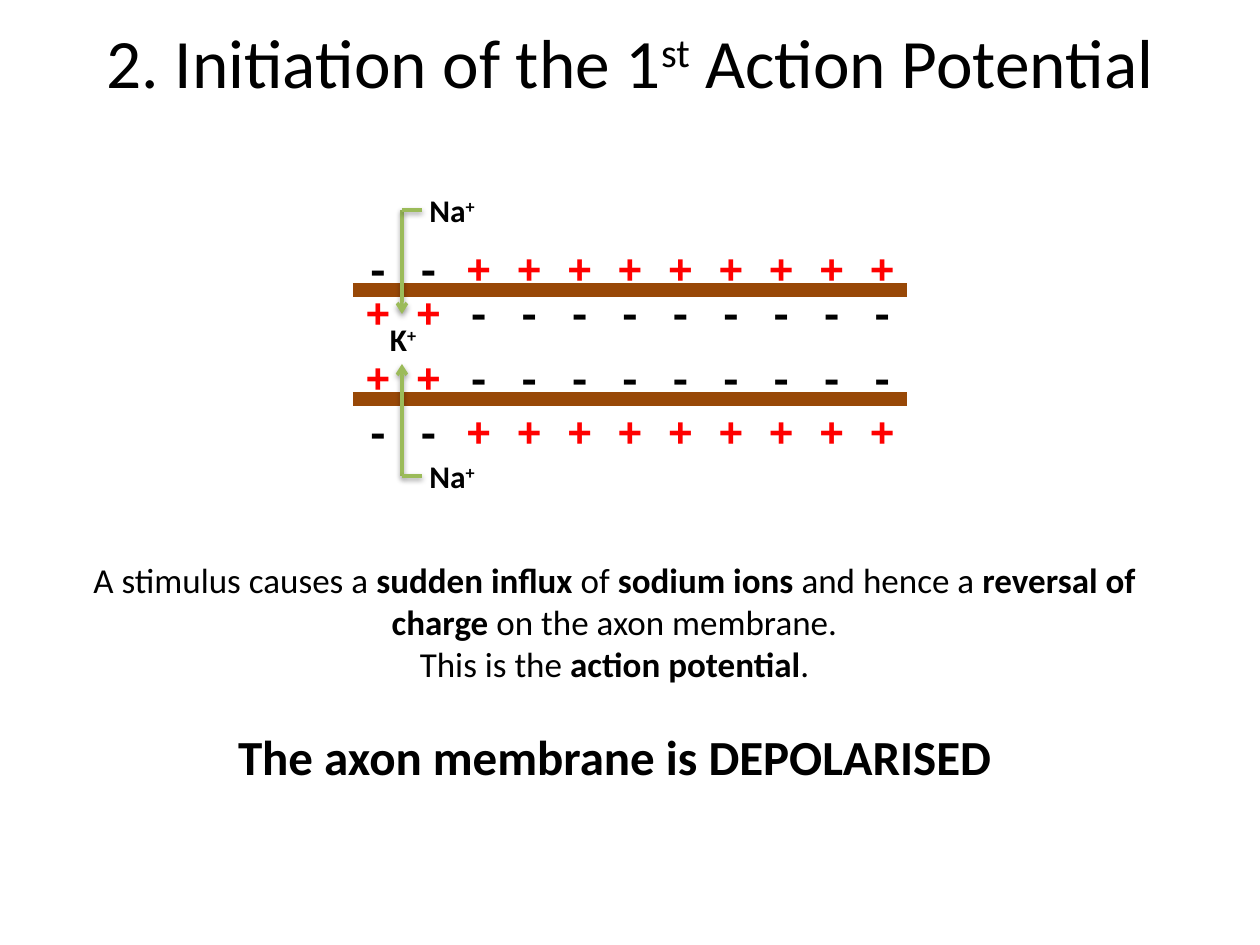
from typing import NamedTuple

from lxml.etree import SubElement
from pptx import Presentation
from pptx.dml.color import RGBColor
from pptx.enum.shapes import MSO_CONNECTOR as Connector
from pptx.enum.text import MSO_ANCHOR as Anchor, PP_ALIGN as Align
from pptx.oxml.ns import qn
from pptx.shapes.connector import Connector as Line
from pptx.util import Emu, Pt

EMU_PER_INCH = 914400
PX_PER_INCH = 126
COLORS = {"ink": "000000", "plus": "FF0000", "membrane": "984807", "flow": "9BBB59"}


class Box(NamedTuple):
    left: int
    top: int
    width: int
    height: int


class Run(NamedTuple):
    text: str
    bold: bool = False
    raised: bool = False
    color: str = "ink"


class Para(NamedTuple):
    runs: list[Run]
    size: float
    font: str = "Calibri"
    align: Align = Align.CENTER
    space_before: int = 0


class ChargeRow(NamedTuple):
    top: int
    reversed_sign: str
    resting_sign: str


class Influx(NamedTuple):
    label_top: int
    start: int
    end: int


TITLE = Para([Run("2. Initiation of the 1"), Run("st", raised=True), Run(" Action Potential")], 39.6)
EXPLANATION = [
    Para([
        Run("A stimulus causes a "), Run("sudden influx", True), Run(" of "),
        Run("sodium ions ", True), Run("and hence a "), Run("reversal of charge", True),
        Run(" on the axon membrane."),
    ], 20),
    Para([Run("This is the "), Run("action potential", True), Run(".")], 20),
    Para([Run("The axon membrane is DEPOLARISED", True)], 28, space_before=24),
]

AXON_LEFT, AXON_RIGHT = 353, 907
MEMBRANES = [290, 399]
REVERSED_COUNT, RESTING_COUNT = 2, 9
CHARGE_ROWS = [
    ChargeRow(236, "-", "+"),
    ChargeRow(280, "+", "-"),
    ChargeRow(345, "+", "-"),
    ChargeRow(399, "-", "+"),
]

CHANNEL_X, SODIUM_X = 402, 422
INFLUXES = [Influx(185, 210, 314), Influx(451, 476, 364)]


def px(length: int) -> Emu:
    return Emu(round(length * EMU_PER_INCH / PX_PER_INCH))


def rgb(color: str) -> RGBColor:
    return RGBColor.from_string(COLORS[color])


def add_text(shapes, box: Box, paras: list[Para], anchor: Anchor = Anchor.TOP) -> None:
    frame = shapes.add_textbox(*map(px, box)).text_frame
    frame.word_wrap = True
    frame.vertical_anchor = anchor
    for index, para in enumerate(paras):
        paragraph = frame.add_paragraph() if index else frame.paragraphs[0]
        paragraph.alignment = para.align
        paragraph.space_before = Pt(para.space_before)
        for part in para.runs:
            run = paragraph.add_run()
            run.text = part.text
            run.font.name = para.font
            run.font.size = Pt(para.size)
            run.font.bold = part.bold
            run.font.color.rgb = rgb(part.color)
            if part.raised:
                run.font._element.set("baseline", "30000")


def add_line(shapes, start: tuple[int, int], end: tuple[int, int], color: str, width: float) -> Line:
    line = shapes.add_connector(Connector.STRAIGHT, *map(px, start + end))
    line.line.color.rgb = rgb(color)
    line.line.width = Pt(width)
    SubElement(line._element.spPr, qn("a:effectLst"))
    return line


def add_flow(shapes, start: tuple[int, int], end: tuple[int, int], arrow: bool = False) -> None:
    flow = add_line(shapes, start, end, "flow", 2)
    if arrow:
        SubElement(flow.line._get_or_add_ln(), qn("a:tailEnd"), type="arrow")
    effects = flow._element.spPr.find(qn("a:effectLst"))
    shadow = SubElement(effects, qn("a:outerShdw"), blurRad=str(Pt(3.1)), dist=str(Pt(1.6)),
                        dir="5400000", rotWithShape="0")
    shade = SubElement(shadow, qn("a:srgbClr"), val=COLORS["ink"])
    SubElement(shade, qn("a:alpha"), val="38000")


def add_ion(shapes, symbol: str, left: int, top: int) -> None:
    ion = Para([Run(symbol, True), Run("+", True, raised=True)], 18)
    add_text(shapes, Box(left, top, 100, 50), [ion])


def charges(sign: str, count: int) -> Run:
    return Run(" ".join(sign * count), True, color="plus" if sign == "+" else "ink")


def add_charge_row(shapes, row: ChargeRow) -> None:
    flipped = charges(row.reversed_sign, REVERSED_COUNT)
    runs = [flipped._replace(text=flipped.text + " "), charges(row.resting_sign, RESTING_COUNT)]
    add_text(shapes, Box(AXON_LEFT, row.top, 576, 63),
             [Para(runs, 24, "Courier New", Align.LEFT)])


def main() -> None:
    deck = Presentation()
    deck.slide_width, deck.slide_height = px(1260), px(945)
    shapes = deck.slides.add_slide(deck.slide_layouts[6]).shapes

    add_text(shapes, Box(63, 37, 1134, 48), [TITLE], Anchor.MIDDLE)
    add_text(shapes, Box(74, 552, 1081, 285), EXPLANATION)
    for influx in INFLUXES:
        add_ion(shapes, "Na", CHANNEL_X, influx.label_top)
    add_ion(shapes, "K", AXON_LEFT, 314)

    axon = shapes.add_group_shape().shapes
    for y in MEMBRANES:
        add_line(axon, (AXON_LEFT, y), (AXON_RIGHT, y), "membrane", 7.5)
    for row in CHARGE_ROWS:
        add_charge_row(axon, row)

    for influx in INFLUXES:
        entry = (CHANNEL_X, influx.start)
        add_flow(shapes, entry, (CHANNEL_X, influx.end), arrow=True)
        add_flow(shapes, entry, (SODIUM_X, influx.start))

    deck.save("out.pptx")


if __name__ == "__main__":
    main()
